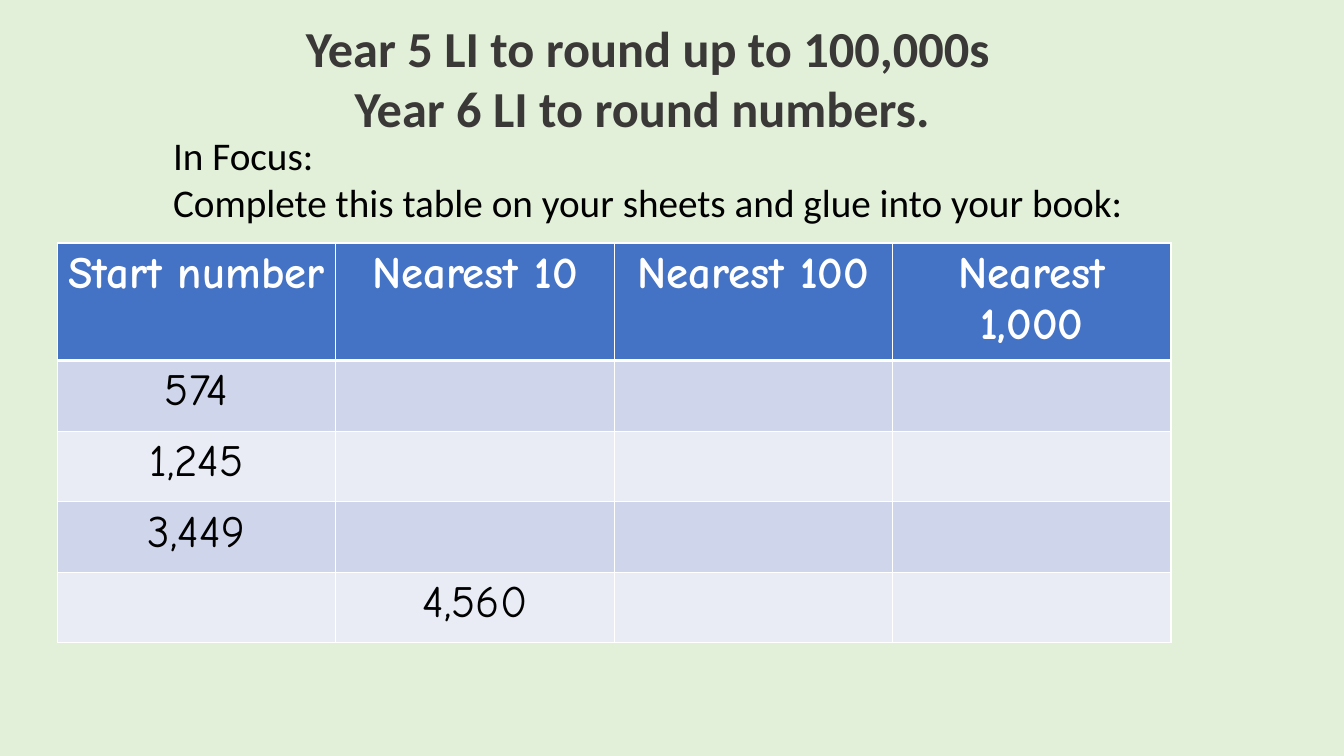
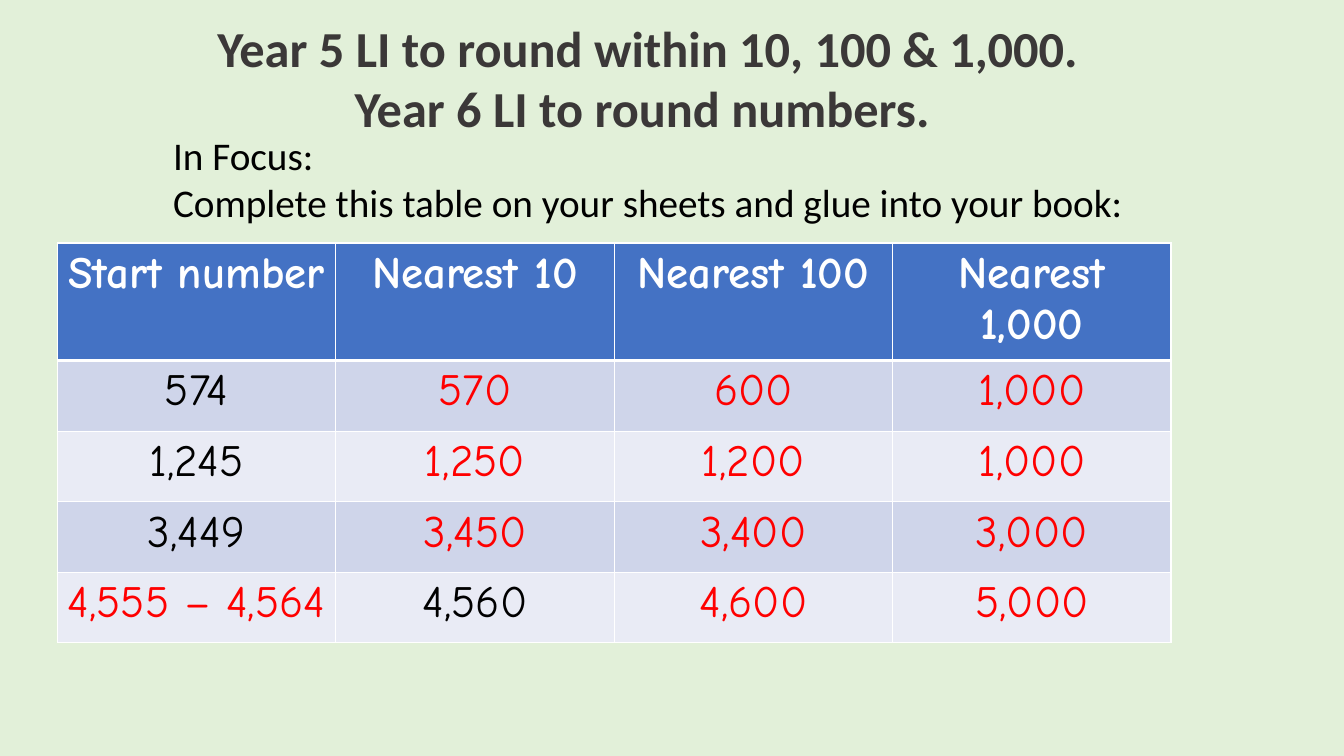
from lxml import etree
from pptx import Presentation
from pptx.dml.color import RGBColor
from pptx.enum.text import MSO_ANCHOR, MSO_AUTO_SIZE, PP_ALIGN
from pptx.oxml.ns import qn
from pptx.util import Pt

LEFT, CENTER = PP_ALIGN.LEFT, PP_ALIGN.CENTER
TOP = MSO_ANCHOR.TOP
NO_AUTOFIT = MSO_AUTO_SIZE.NONE
TITLE_ONLY = 5

COLORS = {
    "page": "E2F0D9",
    "title": "3B3838",
    "text": "000000",
    "answer": "FF0000",
    "header": "4472C4",
    "band_dark": "CFD5EA",
    "band_light": "E9EBF5",
    "white": "FFFFFF",
}
BODY_FONT, TABLE_FONT = "Calibri", "Comic Neue"

# Boxes: left, top, width, height in points
TITLE_BOX = (116.6, 8.6, 692.6, 94.3)
FOCUS_BOX = (116.6, 90.2, 700, 75.6)
TABLE_BOX = (41, 173.5, 795.6, 275)
HEADER_HEIGHT, ROW_HEIGHT = 73.4, 50.4

YEAR_6 = "Year 6 LI to round numbers. "
FOCUS = ["In Focus:", "Complete this table on your sheets and glue into your book:"]
HEADINGS = ["Start number", "Nearest 10", "Nearest 100", "Nearest 1,000"]
NUMBERS = [
    ["574", "570", "600", "1,000"],
    ["1,245", "1,250", "1,200", "1,000"],
    ["3,449", "3,450", "3,400", "3,000"],
    ["4,555 – 4,564", "4,560", "4,600", "5,000"],
]
GIVEN_COLUMNS = [0, 0, 0, 1]  # the column filled in for pupils, row by row


def rgb(name):
    return RGBColor.from_string(COLORS[name])


def write(tf, lines, size=28, font=BODY_FONT, color="text", bold=False, align=LEFT):
    """Fill a text frame with one formatted paragraph per line."""
    for i, line in enumerate(lines):
        p = tf.paragraphs[0] if i == 0 else tf.add_paragraph()
        p.alignment = align
        p.line_spacing = 1.0
        p.space_before = Pt(0)
        r = p.add_run()
        r.text = line
        r.font.name, r.font.size, r.font.bold = font, Pt(size), bold
        r.font.color.rgb = rgb(color)


def add_title(slide, box, lines):
    sp = slide.shapes.title
    sp.left, sp.top, sp.width, sp.height = map(Pt, box)
    tf = sp.text_frame
    tf.word_wrap, tf.vertical_anchor, tf.auto_size = True, TOP, NO_AUTOFIT
    write(tf, lines, size=36, color="title", bold=True, align=CENTER)


def add_focus(slide, box):
    tf = slide.shapes.add_textbox(*map(Pt, box)).text_frame
    tf.word_wrap = True
    write(tf, FOCUS)


def set_borders(cell, **widths):
    """Draw white borders; the sides are named L, R, T and B."""
    tc_pr = cell._tc.get_or_add_tcPr()
    for side, width in widths.items():
        ln = etree.SubElement(tc_pr, qn(f"a:ln{side}"), w=str(Pt(width)))
        fill = etree.SubElement(ln, qn("a:solidFill"))
        etree.SubElement(fill, qn("a:srgbClr"), val=COLORS["white"])


def format_cell(cell, row):
    set_borders(cell, L=1, R=1, T=3 if row == 1 else 1, B=3 if row == 0 else 1)
    band = "band_dark" if row % 2 else "band_light"
    cell.fill.solid()
    cell.fill.fore_color.rgb = rgb("header" if row == 0 else band)


def add_rounding_table(slide, box, show_answers):
    rows, cols = len(NUMBERS) + 1, len(HEADINGS)
    table = slide.shapes.add_table(rows, cols, *map(Pt, box)).table
    table.horz_banding = False
    for column in table.columns:
        column.width = Pt(box[2] / cols)
    for i, values in enumerate([HEADINGS] + NUMBERS):
        table.rows[i].height = Pt(ROW_HEIGHT if i else HEADER_HEIGHT)
        for j, value in enumerate(values):
            cell = table.cell(i, j)
            format_cell(cell, i)
            given = i == 0 or j == GIVEN_COLUMNS[i - 1]
            if not (given or show_answers):
                continue
            color = "white" if i == 0 else "text" if given else "answer"
            write(cell.text_frame, [value], size=32, font=TABLE_FONT,
                  color=color, bold=i == 0, align=CENTER)


def add_rounding_slide(prs, year_5, show_answers):
    slide = prs.slides.add_slide(prs.slide_layouts[TITLE_ONLY])
    add_title(slide, TITLE_BOX, [year_5, YEAR_6])
    add_focus(slide, FOCUS_BOX)
    add_rounding_table(slide, TABLE_BOX, show_answers)


def main():
    prs = Presentation()
    prs.slide_width, prs.slide_height = Pt(960), Pt(540)
    background = prs.slide_master.background.fill
    background.solid()
    background.fore_color.rgb = rgb("page")
    add_rounding_slide(prs, "Year 5 LI to round up to 100,000s", show_answers=False)
    add_rounding_slide(prs, "Year 5 LI to round within 10, 100 & 1,000.", show_answers=True)
    prs.save("out.pptx")


if __name__ == "__main__":
    main()
